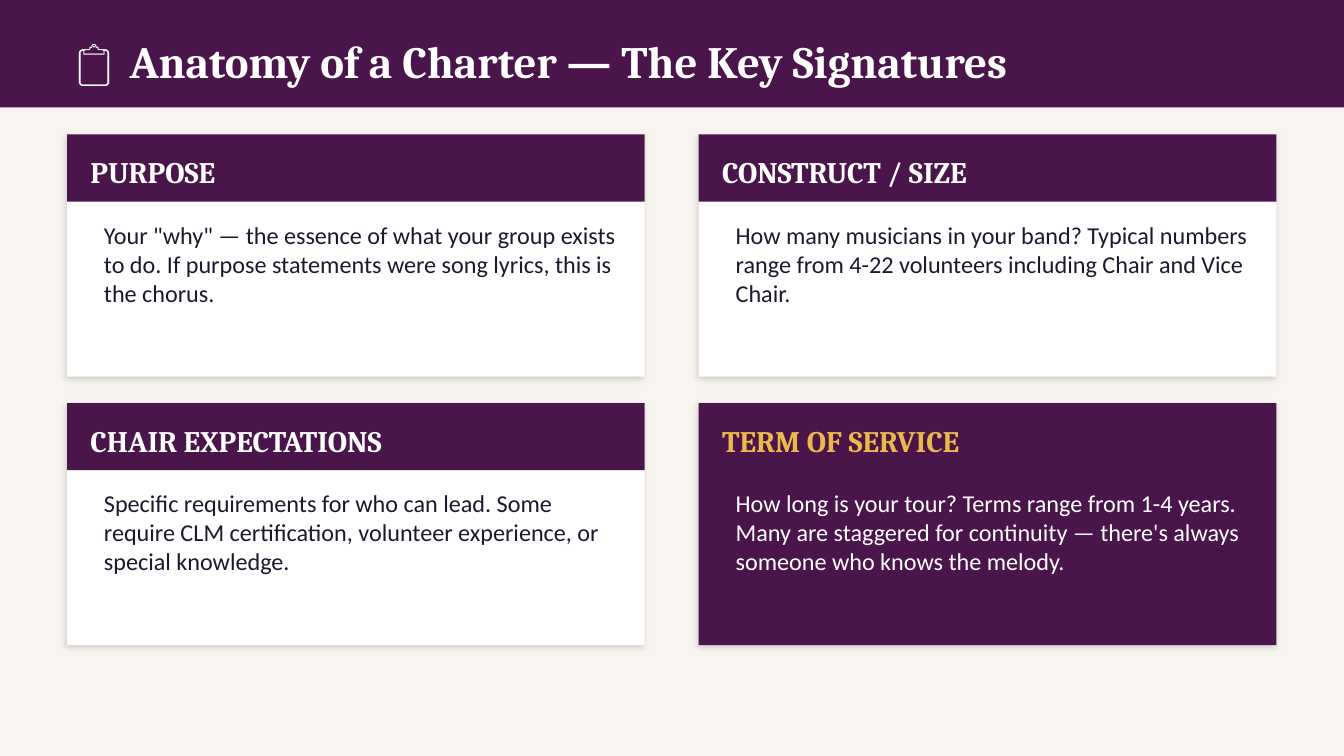
"""Build the slide on the key parts of a charter: four titled cards in a grid."""
from lxml import etree
from pptx import Presentation
from pptx.dml.color import RGBColor
from pptx.enum.shapes import MSO_SHAPE
from pptx.enum.text import MSO_ANCHOR, MSO_AUTO_SIZE, PP_ALIGN
from pptx.oxml import parse_xml
from pptx.oxml.ns import nsdecls, qn
from pptx.util import Cm, Pt

RECT = MSO_SHAPE.RECTANGLE
TOP, MIDDLE = MSO_ANCHOR.TOP, MSO_ANCHOR.MIDDLE
LEFT = PP_ALIGN.LEFT
NO_FIT = MSO_AUTO_SIZE.NONE

PURPLE = RGBColor(0x4A, 0x15, 0x4B)
CREAM = RGBColor(0xF8, 0xF5, 0xF1)
WHITE = RGBColor(0xFF, 0xFF, 0xFF)
INK = RGBColor(0x1A, 0x1A, 0x2E)
GOLD = RGBColor(0xE9, 0xB9, 0x49)

SHADOW = (
    f'<a:outerShdw {nsdecls("a")} blurRad="50800" dist="25400" dir="8100000" '
    'algn="bl" rotWithShape="0"><a:srgbClr val="000000">'
    '<a:alpha val="15000"/></a:srgbClr></a:outerShdw>'
)

MARGIN, CARD_TOP = 1.69, 3.39
CARD_W, CARD_H, HEAD_H = 14.56, 6.1, 1.69
STEP_X, STEP_Y = 15.92, 6.77
TEXT_W = 13.55

CARDS = [
    ("PURPOSE",
     'Your "why" — the essence of what your group exists to do. '
     "If purpose statements were song lyrics, this is the chorus.",
     WHITE, WHITE, INK),
    ("CONSTRUCT / SIZE",
     "How many musicians in your band? Typical numbers range from 4-22 "
     "volunteers including Chair and Vice Chair.",
     WHITE, WHITE, INK),
    ("CHAIR EXPECTATIONS",
     "Specific requirements for who can lead. Some require CLM certification, "
     "volunteer experience, or special knowledge.",
     WHITE, WHITE, INK),
    ("TERM OF SERVICE",
     "How long is your tour? Terms range from 1-4 years. Many are staggered "
     "for continuity — there's always someone who knows the melody.",
     PURPLE, GOLD, WHITE),
]


def add_rect(x, y, w, h, color):
    sp = s.shapes.add_shape(RECT, Cm(x), Cm(y), Cm(w), Cm(h))
    sp.fill.solid()
    sp.fill.fore_color.rgb = color
    sp.line.fill.background()
    sp.shadow.inherit = False
    return sp


def write(sp, text, font, size, color, bold, anchor):
    tf = sp.text_frame
    tf.word_wrap = True
    tf.auto_size = NO_FIT
    tf.vertical_anchor = anchor
    p = tf.paragraphs[0]
    p.alignment = LEFT
    r = p.add_run()
    r.text = text
    r.font.name = font
    r.font.size = Pt(size)
    r.font.bold = bold
    r.font.color.rgb = color
    return p


prs = Presentation()
prs.slide_width, prs.slide_height = Cm(33.87), Cm(19.05)
s = prs.slides.add_slide(prs.slide_layouts[5])
s.background.fill.solid()
s.background.fill.fore_color.rgb = CREAM

add_rect(0, 0, 33.87, 2.71, PURPLE)
title = s.shapes.title
s.shapes._spTree.append(title._element)
title.left, title.top = Cm(MARGIN), Cm(0.68)
title.width, title.height = Cm(30.48), Cm(1.69)
p = write(title, "📋\tAnatomy of a Charter — The Key Signatures",
          "Cambria", 32, WHITE, True, MIDDLE)
pPr = p._p.get_or_add_pPr()
pPr.set("marL", str(Cm(1.32)))
pPr.set("indent", str(-Cm(1.32)))
tabs = etree.SubElement(pPr, qn("a:tabLst"))
etree.SubElement(tabs, qn("a:tab"), pos=str(Cm(1.32)), algn="l")

for i, (heading, body, card_fill, heading_color, body_color) in enumerate(CARDS):
    row, col = divmod(i, 2)
    x, y = MARGIN + col * STEP_X, CARD_TOP + row * STEP_Y

    card = add_rect(x, y, CARD_W, CARD_H, card_fill)
    card._element.spPr.find(qn("a:effectLst")).append(parse_xml(SHADOW))
    if card_fill != PURPLE:
        add_rect(x, y, CARD_W, HEAD_H, PURPLE)

    sp = s.shapes.add_textbox(Cm(x + 0.34), Cm(y + 0.34), Cm(TEXT_W), Cm(1.19))
    write(sp, heading, "Cambria", 21.3, heading_color, True, MIDDLE)
    sp = s.shapes.add_textbox(Cm(x + 0.68), Cm(y + 2.03), Cm(TEXT_W), Cm(3.73))
    write(sp, body, "Calibri", 17.3, body_color, False, TOP)

prs.save("out.pptx")
